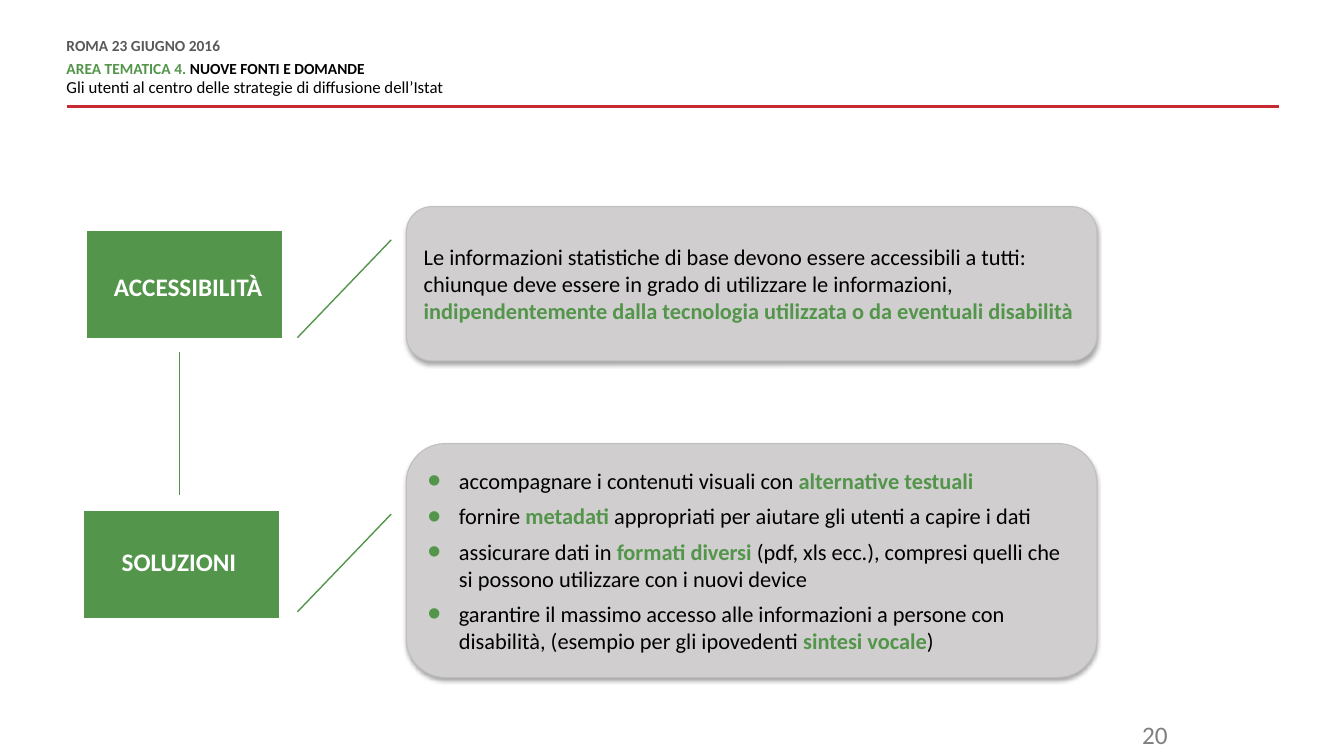
from dataclasses import dataclass

import pptx
import pptx.util
import pptx.dml.color
import pptx.enum.shapes
import pptx.enum.text
import pptx.oxml
import pptx.oxml.ns
from pptx.util import Inches, Pt

RGBColor = pptx.dml.color.RGBColor
GREEN = RGBColor(0x53, 0x95, 0x4A)
RED = RGBColor(0xC7, 0x2A, 0x31)
PANEL_GRAY = RGBColor(0xD0, 0xCE, 0xCE)
PANEL_EDGE = RGBColor(0xBF, 0xBF, 0xBF)
DATE_GRAY = RGBColor(0x59, 0x59, 0x59)
NUMBER_GRAY = RGBColor(0x7F, 0x7F, 0x7F)
BLACK = RGBColor(0, 0, 0)
WHITE = RGBColor(0xFF, 0xFF, 0xFF)

MSO_SHAPE = pptx.enum.shapes.MSO_SHAPE
PP_ALIGN = pptx.enum.text.PP_ALIGN
qn = pptx.oxml.ns.qn
NS = pptx.oxml.ns.nsdecls("a")


@dataclass
class Run:
    text: str
    size: float = 16
    color: RGBColor = BLACK
    bold: bool = False


@dataclass
class Para:
    runs: list[Run]
    align: PP_ALIGN = PP_ALIGN.LEFT
    before: float = 0
    after: float = 0
    line_spacing: float | None = None
    bullet: bool = False


@dataclass
class Box:
    left: float
    top: float
    width: float
    height: float

    def emu(self) -> list[int]:
        return [Inches(v) for v in (self.left, self.top, self.width, self.height)]


@dataclass
class Topic:
    callout: Box
    label: str
    label_box: Box
    panel: Box
    paras: list[Para]
    link_top: float


def key(text: str) -> Run:
    return Run(text, color=GREEN, bold=True)


def bullet(*runs: Run) -> Para:
    return Para(list(runs), after=6, bullet=True)


def write(frame, paras: list[Para]) -> None:
    frame.word_wrap = True
    for i, para in enumerate(paras):
        p = frame.paragraphs[0] if i == 0 else frame.add_paragraph()
        p.alignment = para.align
        p.space_before, p.space_after = Pt(para.before), Pt(para.after)
        if para.line_spacing:
            p.line_spacing = Pt(para.line_spacing)
        if para.bullet:
            props = p._p.get_or_add_pPr()
            props.set("marL", str(Inches(0.31)))
            props.set("indent", str(-Inches(0.31)))
            for xml in (f'<a:buClr {NS}><a:srgbClr val="{GREEN}"/></a:buClr>',
                        f'<a:buSzPct {NS} val="170000"/>',
                        f'<a:buFont {NS} typeface="Arial"/>',
                        f'<a:buChar {NS} char="•"/>'):
                props.append(pptx.oxml.parse_xml(xml))
        for run in para.runs:
            r = p.add_run()
            r.text = run.text
            r.font.name, r.font.size, r.font.bold = "Calibri", Pt(run.size), run.bold
            r.font.color.rgb = run.color


def add_text(slide, box: Box, paras: list[Para], inset: bool = True) -> None:
    frame = slide.shapes.add_textbox(*box.emu()).text_frame
    if not inset:
        frame.margin_left = frame.margin_right = 0
        frame.margin_top = frame.margin_bottom = 0
    write(frame, paras)


def add_line(slide, x1: float, y1: float, x2: float, y2: float,
             color: RGBColor = GREEN, width: float = 1) -> None:
    line = slide.shapes.add_connector(
        pptx.enum.shapes.MSO_CONNECTOR.STRAIGHT,
        Inches(x1), Inches(y1), Inches(x2), Inches(y2))
    line.line.color.rgb = color
    line.line.width = Pt(width)
    line._element.spPr.append(pptx.oxml.parse_xml(f"<a:effectLst {NS}/>"))


def add_panel(slide, box: Box, paras: list[Para]) -> None:
    panel = slide.shapes.add_shape(MSO_SHAPE.ROUNDED_RECTANGLE, *box.emu())
    panel.fill.solid()
    panel.fill.fore_color.rgb = PANEL_GRAY
    panel.line.color.rgb = PANEL_EDGE
    panel.line.width = Pt(0.75)
    panel.shadow.inherit = False
    panel._element.spPr.find(qn("a:effectLst")).append(pptx.oxml.parse_xml(
        f'<a:outerShdw {NS} blurRad="{Pt(3.1)}" dist="{Pt(1.8)}" dir="5400000" '
        'rotWithShape="0"><a:srgbClr val="000000"><a:alpha val="35000"/>'
        '</a:srgbClr></a:outerShdw>'))
    panel.text_frame.vertical_anchor = pptx.enum.text.MSO_ANCHOR.MIDDLE
    write(panel.text_frame, paras)


def add_topic(slide, topic: Topic) -> None:
    callout = slide.shapes.add_shape(MSO_SHAPE.LINE_CALLOUT_1, *topic.callout.emu())
    callout.rotation = 180
    for i, value in enumerate((0.19, -0.08, 0.7, -0.55)):
        callout.adjustments[i] = value
    callout.fill.solid()
    callout.fill.fore_color.rgb = GREEN
    callout.line.fill.background()
    callout.shadow.inherit = False
    add_text(slide, topic.label_box,
             [Para([Run(topic.label, 18, WHITE, True)], PP_ALIGN.CENTER)])
    add_panel(slide, topic.panel, topic.paras)
    add_line(slide, 3.88, topic.link_top, 2.95, topic.link_top + 0.97)


HEADER = [
    Para([Run("ROMA 23 GIUGNO 2016", 11, DATE_GRAY, True)], after=6, line_spacing=10.8),
    Para([Run("AREA TEMATICA 4. ", 11, GREEN, True),
          Run("NUOVE FONTI E DOMANDE", 11, BLACK, True)], line_spacing=10.8),
    Para([Run("Gli utenti al centro delle strategie di diffusione dell’Istat", 12)],
         before=3, after=6, line_spacing=10.8),
]

TOPICS = [
    Topic(Box(0.86, 2.29, 1.94, 1.06), "ACCESSIBILITÀ", Box(1, 2.64, 1.73, 0.4),
          Box(4.03, 2.05, 6.85, 1.53),
          [Para([Run("Le informazioni statistiche di base devono essere accessibili a "
                     "tutti: chiunque deve essere in grado di utilizzare le informazioni, "),
                 key("indipendentemente dalla tecnologia utilizzata o da eventuali "
                     "disabilità")])],
          link_top=2.38),
    Topic(Box(0.83, 5.07, 1.94, 1.06), "SOLUZIONI", Box(0.91, 5.37, 1.73, 0.4),
          Box(4.03, 4.4, 6.85, 2.32),
          [bullet(Run("accompagnare i contenuti visuali con "),
                  key("alternative testuali")),
           bullet(Run("fornire "), key("metadati "),
                  Run("appropriati per aiutare gli utenti a capire i dati")),
           bullet(Run("assicurare dati in "), key("formati diversi "),
                  Run("(pdf, xls ecc.), compresi quelli che si possono utilizzare "
                      "con i nuovi device")),
           bullet(Run("garantire il massimo accesso alle informazioni a persone con "
                      "disabilità, (esempio per gli ipovedenti "),
                  key("sintesi vocale"), Run(")"))],
          link_top=5.1),
]


def main() -> None:
    deck = pptx.Presentation()
    deck.slide_width, deck.slide_height = Inches(13.33), Inches(7.5)
    slide = deck.slides.add_slide(deck.slide_layouts[6])

    # Header and page number
    add_line(slide, 12.69, 1.06, 0.66, 1.06, RED, 2)
    add_text(slide, Box(0.66, 0.39, 8.34, 0.59), HEADER, inset=False)
    add_text(slide, Box(10.5, 7.09, 1.18, 0.35),
             [Para([Run("20", 18, NUMBER_GRAY)], PP_ALIGN.RIGHT)])

    # Topics, joined by a vertical line
    for topic in TOPICS:
        add_topic(slide, topic)
    add_line(slide, 1.78, 3.49, 1.78, 4.91)

    deck.save("out.pptx")


if __name__ == "__main__":
    main()
